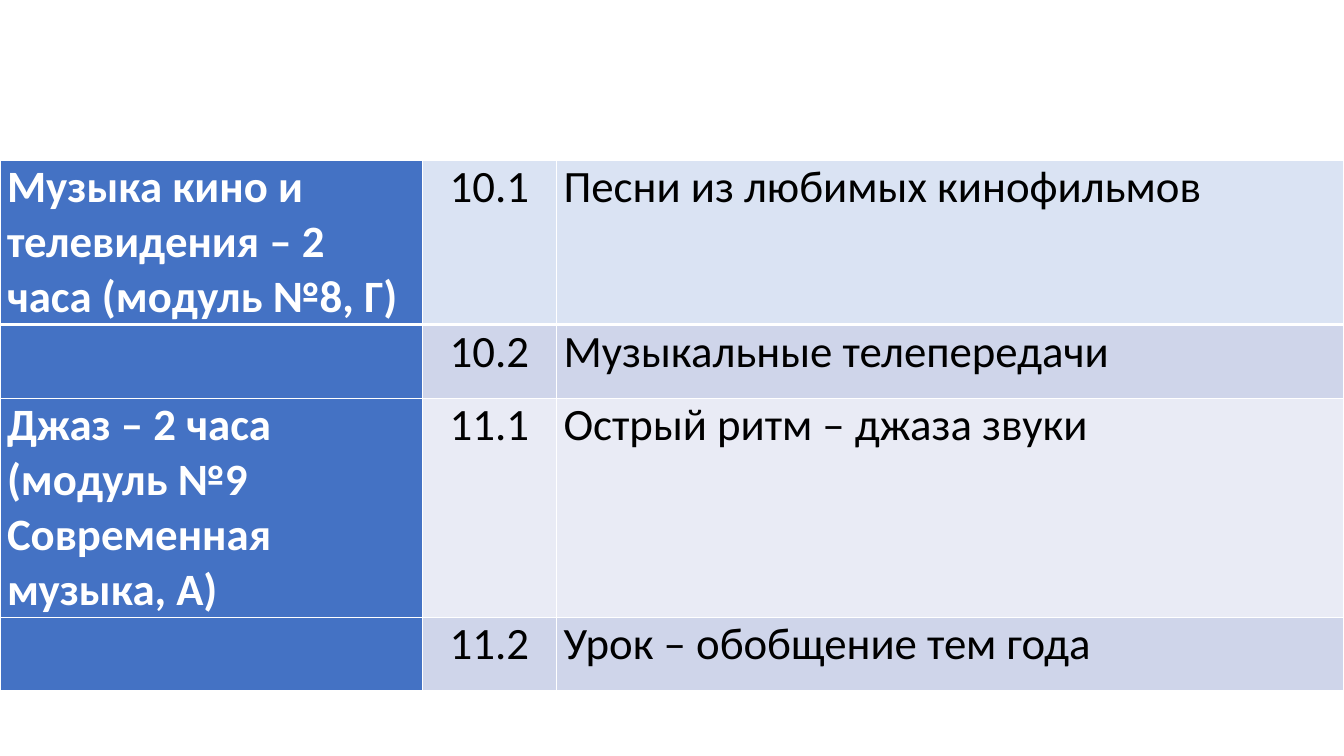
"""Builds the music lesson plan slide with its table of modules and topics."""
import dataclasses

import lxml.etree
import pptx
import pptx.dml.color
import pptx.enum.text
import pptx.oxml.ns
import pptx.table
import pptx.util

EMU_PER_PX = 9144
SLIDE_WIDTH, SLIDE_HEIGHT = 1333, 750
TABLE_TOP = 159
COLUMN_WIDTHS = (419, 133, 781)
SIDE_MARGIN = 7
MODULE_FILL = "4472C4"
WHITE, BLACK = "FFFFFF", "000000"
THIN, THICK = 1, 3


@dataclasses.dataclass(frozen=True)
class Lesson:
    module: str
    number: str
    topic: str
    height: int
    fill: str


LESSONS = (
    Lesson("Музыка кино и телевидения – 2 часа (модуль №8, Г)", "10.1",
           "Песни из любимых кинофильмов", 163, "DAE3F3"),
    Lesson("", "10.2", "Музыкальные телепередачи", 73, "CFD5EA"),
    Lesson("Джаз – 2 часа (модуль №9 Современная музыка, А)", "11.1",
           "Острый ритм – джаза звуки", 217, "E9EBF5"),
    Lesson("", "11.2", "Урок – обобщение тем года", 73, "CFD5EA"),
)


def px(length: int) -> pptx.util.Emu:
    return pptx.util.Emu(length * EMU_PER_PX)


def color(value: str) -> pptx.dml.color.RGBColor:
    return pptx.dml.color.RGBColor.from_string(value)


def add_borders(cell: pptx.table._Cell, top: int, bottom: int) -> None:
    properties = cell._tc.get_or_add_tcPr()
    sides = {"lnL": THIN, "lnR": THIN, "lnT": top, "lnB": bottom}
    for index, (side, points) in enumerate(sides.items()):
        line = lxml.etree.Element(pptx.oxml.ns.qn(f"a:{side}"), w=str(pptx.util.Pt(points)))
        fill = lxml.etree.SubElement(line, pptx.oxml.ns.qn("a:solidFill"))
        lxml.etree.SubElement(fill, pptx.oxml.ns.qn("a:srgbClr"), val=WHITE)
        properties.insert(index, line)


def fill_cell(cell: pptx.table._Cell, text: str, fill: str, is_module: bool, centered: bool) -> None:
    cell.margin_left = cell.margin_right = px(SIDE_MARGIN)
    cell.margin_top = cell.margin_bottom = 0
    cell.fill.solid()
    cell.fill.fore_color.rgb = color(fill)
    if not text:
        return
    paragraph = cell.text_frame.paragraphs[0]
    alignment = pptx.enum.text.PP_ALIGN
    paragraph.alignment = alignment.CENTER if centered else alignment.LEFT
    run = paragraph.add_run()
    run.text = text
    run.font.name = "Calibri"
    run.font.size = pptx.util.Pt(32)
    run.font.bold = is_module
    run.font.color.rgb = color(WHITE if is_module else BLACK)


def fill_row(table: pptx.table.Table, row: int, lesson: Lesson) -> None:
    table.rows[row].height = px(lesson.height)
    for column, text in enumerate((lesson.module, lesson.number, lesson.topic)):
        cell = table.cell(row, column)
        is_module = column == 0
        fill_cell(cell, text, MODULE_FILL if is_module else lesson.fill, is_module, column == 1)
        add_borders(cell, THICK if row == 1 else THIN, THICK if row == 0 else THIN)


def main() -> None:
    presentation = pptx.Presentation()
    presentation.slide_width = px(SLIDE_WIDTH)
    presentation.slide_height = px(SLIDE_HEIGHT)
    slide = presentation.slides.add_slide(presentation.slide_layouts[6])
    table_height = sum(lesson.height for lesson in LESSONS)
    table = slide.shapes.add_table(
        len(LESSONS), len(COLUMN_WIDTHS), px(0), px(TABLE_TOP), px(SLIDE_WIDTH), px(table_height)
    ).table
    table.first_row = table.horz_banding = False
    for column, width in zip(table.columns, COLUMN_WIDTHS):
        column.width = px(width)
    for row, lesson in enumerate(LESSONS):
        fill_row(table, row, lesson)
    presentation.save("out.pptx")


if __name__ == "__main__":
    main()
